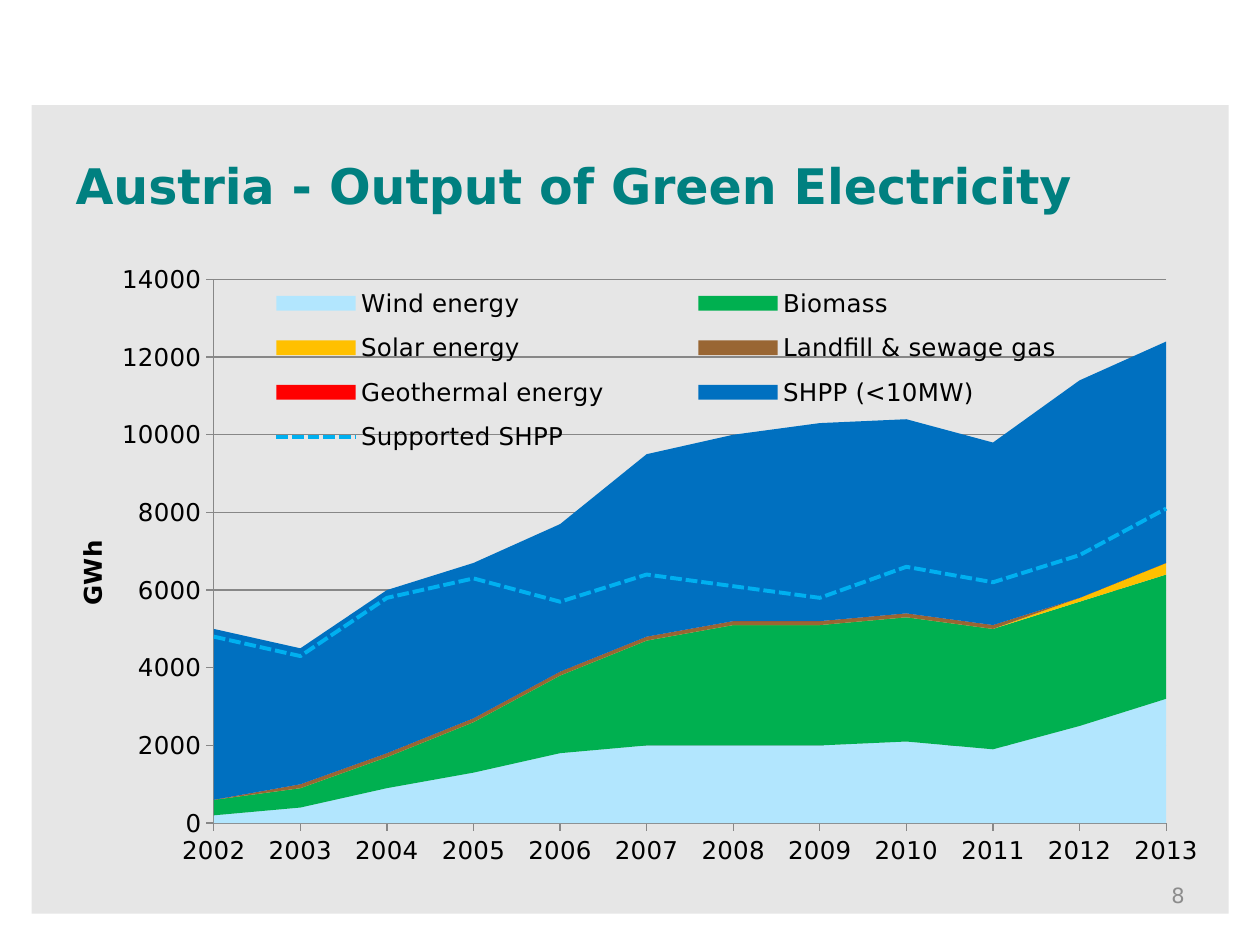
from typing import NamedTuple

from lxml.etree import SubElement
from pptx import Presentation
from pptx.chart.data import CategoryChartData as ChartData
from pptx.dml.color import RGBColor
from pptx.enum.chart import XL_CHART_TYPE as Kind
from pptx.enum.chart import XL_LEGEND_POSITION as Side
from pptx.enum.chart import XL_MARKER_STYLE as Mark
from pptx.enum.chart import XL_TICK_MARK as Tick
from pptx.enum.dml import MSO_LINE as Dash
from pptx.enum.shapes import MSO_SHAPE as Form
from pptx.enum.text import MSO_ANCHOR as Anchor
from pptx.enum.text import PP_ALIGN as Align
from pptx.oxml import parse_xml
from pptx.oxml.ns import nsdecls, qn
from pptx.util import Cm, Pt

FONT = "DejaVu Sans"
TEAL = RGBColor(0x00, 0x80, 0x80)
PALE = RGBColor(0xE6, 0xE6, 0xE6)
GREY = RGBColor(0x8C, 0x8C, 0x8C)
RULE = RGBColor(0x87, 0x87, 0x87)
BLACK = RGBColor(0x00, 0x00, 0x00)
SKY = RGBColor(0xB2, 0xE6, 0xFE)
GREEN = RGBColor(0x00, 0xB0, 0x50)
GOLD = RGBColor(0xFF, 0xC0, 0x00)
BROWN = RGBColor(0x99, 0x66, 0x33)
RED = RGBColor(0xFF, 0x00, 0x00)
BLUE = RGBColor(0x00, 0x70, 0xC0)
CYAN = RGBColor(0x00, 0xB0, 0xF0)


class Box(NamedTuple):
    """Left, top, width and height."""

    x: float
    y: float
    w: float = 0
    h: float = 0


class Source(NamedTuple):
    """One energy source with its yearly output in GWh."""

    name: str
    color: RGBColor
    vals: list[int]


AREAS = [
    Source("Wind energy", SKY,
           [200, 400, 900, 1300, 1800, 2000, 2000, 2000, 2100, 1900, 2500, 3200]),
    Source("Biomass", GREEN,
           [400, 500, 800, 1300, 2000, 2700, 3100, 3100, 3200, 3100, 3200, 3200]),
    Source("Solar energy", GOLD, [0] * 10 + [100, 300]),
    Source("Landfill & sewage gas", BROWN, [0] + [100] * 9 + [0, 0]),
    Source("Geothermal energy", RED, [0] * 12),
    Source("SHPP (<10MW)", BLUE,
           [4400, 3500, 4200, 4000, 3800, 4700, 4800, 5100, 5000, 4700, 5600, 5700]),
]
TREND = Source("Supported SHPP", CYAN,
               [4800, 4300, 5800, 6300, 5700, 6400, 6100, 5800, 6600, 6200, 6900, 8100])


def lengths(box: Box) -> list[Cm]:
    """Turn a box in centimetres into lengths."""
    return [Cm(v) for v in box]


def style(font, size: float, color: RGBColor, bold: bool = False) -> None:
    """Format a font."""
    font.name, font.size, font.bold = FONT, Pt(size), bold
    font.color.rgb = color


def write(shape, text: str, *, size: float, color: RGBColor,
          bold: bool = False, align=Align.LEFT) -> None:
    """Put one formatted line into a shape."""
    frame = shape.text_frame
    frame.word_wrap = True
    frame.vertical_anchor = Anchor.MIDDLE
    frame.text = text
    para = frame.paragraphs[0]
    para.alignment = align
    style(para.runs[0].font, size, color, bold)


def place(part, index: int, box: Box, inner: bool = False) -> None:
    """Give a chart part a manual layout in shares of the chart."""
    for old in part.findall(qn("c:layout")):
        part.remove(old)
    layout = parse_xml(f"<c:layout {nsdecls('c')}/>")
    manual = SubElement(layout, qn("c:manualLayout"))
    tags = [("layoutTarget", "inner")] if inner else []
    tags += [("xMode", "edge"), ("yMode", "edge")]
    tags += [(k, str(v)) for k, v in box._asdict().items() if v]
    for tag, val in tags:
        SubElement(manual, qn(f"c:{tag}")).set("val", val)
    part.insert(index, layout)


def clear_fill():
    """Return chart properties without fill or line."""
    return parse_xml(f"<c:spPr {nsdecls('c', 'a')}><a:noFill/>"
                     "<a:ln><a:noFill/></a:ln></c:spPr>")


def add_trend(chart) -> None:
    """Move the last area series into a line plot on the same axes."""
    area = chart.plots[0]._element
    line = parse_xml(f"<c:lineChart {nsdecls('c')}><c:grouping val='standard'/>"
                     "<c:varyColors val='0'/></c:lineChart>")
    line.append(area.findall(qn("c:ser"))[-1])
    SubElement(line, qn("c:marker")).set("val", "1")
    for axis in area.findall(qn("c:axId")):
        SubElement(line, qn("c:axId")).set("val", axis.get("val"))
    area.addnext(line)
    trend = chart.plots[1].series[0]
    trend.smooth = False
    trend.marker.style = Mark.NONE
    pen = trend.format.line
    pen.color.rgb, pen.width = TREND.color, Pt(2.25)
    pen.dash_style = Dash.SQUARE_DOT


def add_chart(slide, box: Box) -> None:
    """Draw the stacked output with the supported line."""
    data = ChartData(number_format="General")
    data.categories = [str(year) for year in range(2002, 2014)]
    for item in [*AREAS, TREND]:
        data.add_series(item.name, item.vals)
    chart = slide.shapes.add_chart(Kind.AREA_STACKED, *lengths(box), data).chart
    chart.has_title = False
    style(chart.font, 14, BLACK)
    add_trend(chart)
    chart.plots[0].vary_by_categories = False
    for item, series in zip(AREAS, chart.plots[0].series):
        series.format.fill.solid()
        series.format.fill.fore_color.rgb = item.color

    years, output = chart.category_axis, chart.value_axis
    for axis in (years, output):
        axis.major_tick_mark, axis.minor_tick_mark = Tick.OUTSIDE, Tick.NONE
        axis.format.line.color.rgb = RULE
    years.has_major_gridlines = False
    output.has_major_gridlines = True
    output.major_gridlines.format.line.color.rgb = RULE
    output.minimum_scale, output.maximum_scale, output.major_unit = 0, 14000, 2000
    output._element.find(qn("c:crossBetween")).set("val", "midCat")
    title = output.axis_title
    title.text_frame.text = "GWh"
    style(title.text_frame.paragraphs[0].runs[0].font, 14, BLACK, True)
    title.text_frame._txBody.bodyPr.set("rot", "-5400000")
    title.text_frame._txBody.bodyPr.set("vert", "horz")

    chart.has_legend = True
    legend = chart.legend
    legend.position, legend.include_in_layout = Side.TOP, True
    style(legend.font, 14, BLACK)

    space = chart._chartSpace
    plot = space.chart.plotArea
    plot.append(clear_fill())
    space.find(qn("c:txPr")).addprevious(clear_fill())
    place(plot, 0, Box(0.15, 0.04, 0.8, 0.87), inner=True)
    place(legend._element, 1, Box(0.13, 0.03, 0.8, 0.31))
    place(title._element, 1, Box(0.03, 0.45))


def main() -> None:
    """Build the slide and save it."""
    deck = Presentation()
    deck.slide_width, deck.slide_height = Cm(25.4), Cm(19.05)
    slide = deck.slides.add_slide(deck.slide_layouts[5])
    shapes = slide.shapes

    panel = shapes.add_shape(Form.RECTANGLE, *lengths(Box(0.64, 2.12, 24.13, 16.3)))
    panel.shadow.inherit = False
    panel.fill.solid()
    panel.fill.fore_color.rgb = PALE
    panel.line.fill.background()
    shapes.title._element.addprevious(panel._element)

    head = shapes.title
    head.left, head.top, head.width, head.height = lengths(Box(1.27, 2.13, 22.86, 3.18))
    write(head, "Austria - Output of Green Electricity", size=28, color=TEAL, bold=True)
    page = shapes.add_textbox(*lengths(Box(18.21, 17.7, 5.92, 0.71)))
    write(page, "8", size=12, color=GREY, align=Align.RIGHT)
    add_chart(slide, Box(0.71, 5.13, 24, 12.6))
    deck.save("out.pptx")


if __name__ == "__main__":
    main()
